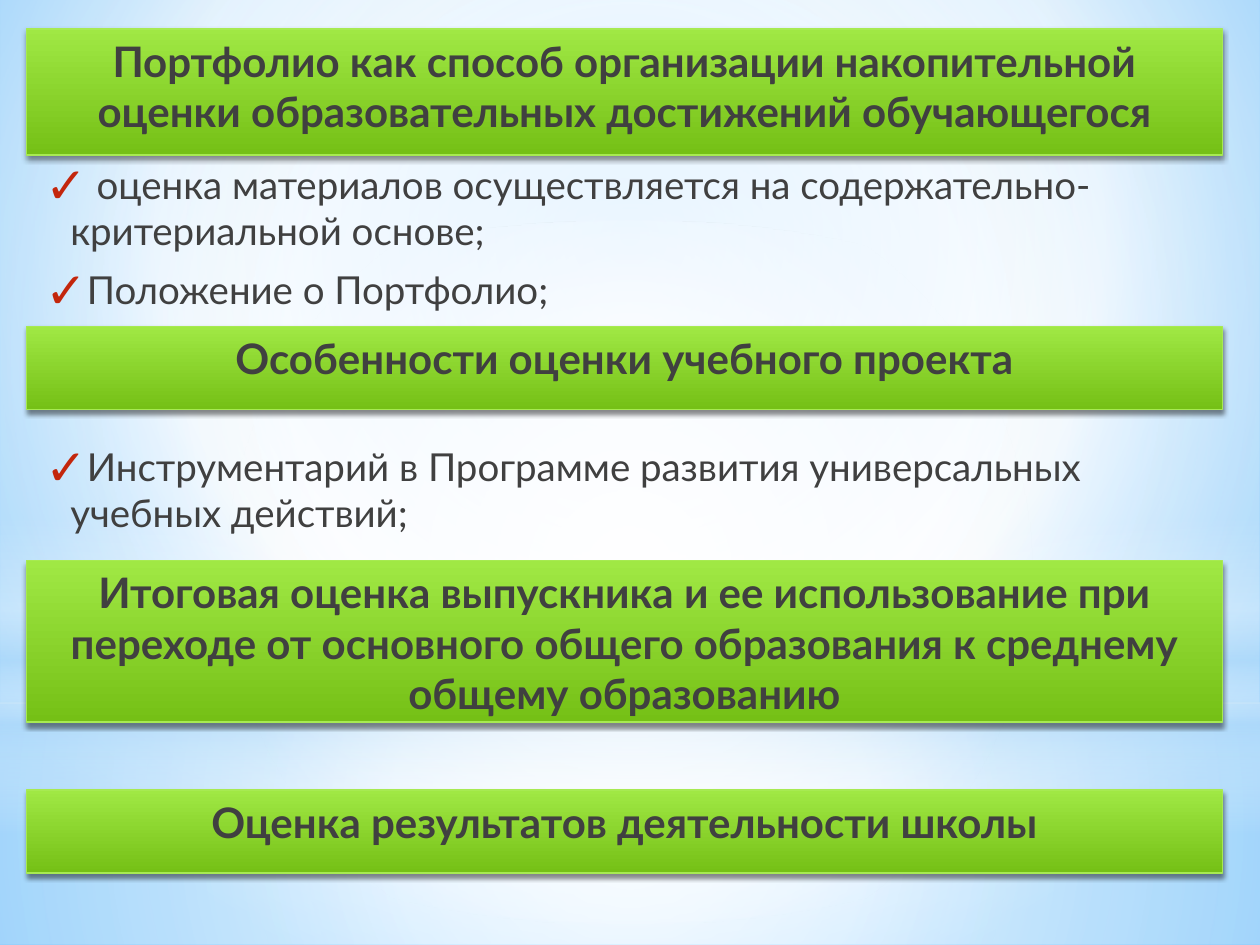
from dataclasses import dataclass
from typing import Any, Optional

import pptx
import pptx.dml.color
import pptx.enum.shapes
import pptx.enum.text
import pptx.oxml
import pptx.oxml.ns
import pptx.util

Pt = pptx.util.Pt
RECT = pptx.enum.shapes.MSO_SHAPE.RECTANGLE
OVAL = pptx.enum.shapes.MSO_SHAPE.OVAL
NS = pptx.oxml.ns.nsdecls("a")
FONT = "Lato"
COLORS = {
    "white": "FFFFFF", "sky": "B4DCFA", "bg_light": "9ED5FF", "bg_deep": "5BB9FF",
    "bar_top": "A0E844", "bar_bottom": "75C016", "bar_line": "A7EA52",
    "text": "404040", "check": "C3260C", "shadow": "000000",
}
WIDTH, HEIGHT = 720, 540
LEFT, COLUMN = 15.12, 683.28
CENTER = (50, 50, 50, 50)


@dataclass
class Stop:
    pos: int
    color: str
    opacity: int = 100


@dataclass
class Glow:
    shape: Any
    top: float
    height: float
    stops: list[Stop]
    focus: Optional[tuple[int, int, int, int]] = CENTER


@dataclass
class Bar:
    top: float
    height: float
    text: str


@dataclass
class Checklist:
    top: float
    height: float
    items: list[str]


def rgb(name: str) -> pptx.dml.color.RGBColor:
    return pptx.dml.color.RGBColor.from_string(COLORS[name])


def set_gradient(owner: Any, fill: Any, stops: list[Stop], focus=None) -> None:
    """Circular gradient around focus (left, top, right, bottom), or top to bottom without one."""
    fill.gradient()
    marks = "".join(
        f'<a:gs pos="{g.pos * 1000}"><a:srgbClr val="{COLORS[g.color]}">'
        f'<a:alpha val="{g.opacity * 1000}"/></a:srgbClr></a:gs>' for g in stops)
    if focus:
        sides = " ".join(f'{k}="{v * 1000}"' for k, v in zip("ltrb", focus))
        direction = f'<a:path path="circle"><a:fillToRect {sides}/></a:path>'
    else:
        direction = '<a:lin ang="5400000" scaled="0"/>'
    old = owner.element.xpath(".//a:gradFill")[0]
    old.getparent().replace(old, pptx.oxml.parse_xml(
        f'<a:gradFill {NS} rotWithShape="1"><a:gsLst>{marks}</a:gsLst>{direction}</a:gradFill>'))


def add_run(p: Any, text: str, size: float, bold: bool = False) -> None:
    r = p.add_run()
    r.text = text
    r.font.name, r.font.size, r.font.bold = FONT, Pt(size), bold
    r.font.color.rgb = rgb("text")


def add_glow(s: Any, glow: Glow) -> None:
    sp = s.shapes.add_shape(glow.shape, 0, Pt(glow.top), Pt(WIDTH), Pt(glow.height))
    sp.shadow.inherit = False
    sp.line.fill.background()
    set_gradient(sp, sp.fill, glow.stops, glow.focus)


def add_bar(s: Any, bar: Bar) -> None:
    sp = s.shapes.add_shape(RECT, Pt(LEFT), Pt(bar.top), Pt(COLUMN), Pt(bar.height))
    set_gradient(sp, sp.fill, [Stop(0, "bar_top"), Stop(100, "bar_bottom")])
    sp.line.color.rgb = rgb("bar_line")
    sp.line.width = Pt(0.75)
    # Soft shadow below the bar
    sp.shadow.inherit = False
    sp.element.xpath("./p:spPr/a:effectLst")[0].append(pptx.oxml.parse_xml(
        f'<a:outerShdw {NS} blurRad="{Pt(3.1)}" dist="{Pt(1.8)}" dir="5400000" rotWithShape="0">'
        f'<a:srgbClr val="{COLORS["shadow"]}"><a:alpha val="45000"/></a:srgbClr></a:outerShdw>'))
    tf = sp.text_frame
    tf.word_wrap = True
    tf.vertical_anchor = pptx.enum.text.MSO_ANCHOR.TOP
    p = tf.paragraphs[0]
    p.alignment = pptx.enum.text.PP_ALIGN.CENTER
    add_run(p, bar.text, 24, bold=True)


def add_checklist(s: Any, box: Checklist) -> None:
    sp = s.shapes.add_textbox(Pt(LEFT), Pt(box.top), Pt(COLUMN), Pt(box.height))
    tf = sp.text_frame
    tf.word_wrap = True
    for i, item in enumerate(box.items):
        p = tf.add_paragraph() if i else tf.paragraphs[0]
        p.space_before, p.space_after = Pt(4.4), Pt(3)
        pPr = p._p.get_or_add_pPr()
        pPr.set("marL", str(Pt(18)))
        pPr.set("indent", str(Pt(-14.4)))
        for xml in (f'<a:buClr {NS}><a:srgbClr val="{COLORS["check"]}"/></a:buClr>',
                    f'<a:buSzPct {NS} val="130000"/>',
                    f'<a:buFont {NS} typeface="{FONT}"/>',
                    f'<a:buChar {NS} char="✓"/>'):
            pPr.append(pptx.oxml.parse_xml(xml))
        add_run(p, item, 22)


GLOWS = [
    Glow(RECT, 401.76, 138.24,
         [Stop(0, "white", 91), Stop(37, "white", 76), Stop(100, "sky", 79)]),
    Glow(RECT, 0, 401.76,
         [Stop(0, "white", 89), Stop(48, "white", 62), Stop(100, "sky", 79)]),
    Glow(RECT, 296.64, 180,
         [Stop(0, "white", 0), Stop(29, "white", 30), Stop(45, "sky", 40),
          Stop(55, "white", 26), Stop(65, "sky", 60), Stop(100, "white", 0)], None),
    Glow(OVAL, 126, 401.76, [Stop(0, "white"), Stop(56, "white", 0)]),
]
CHECKLISTS = [
    Checklist(88.56, 98, [" оценка материалов осуществляется на содержательно-критериальной основе;",
                          "Положение о Портфолио;"]),
    Checklist(249.7, 64, ["Инструментарий в Программе развития универсальных учебных действий;"]),
]
BARS = [
    Bar(16.56, 72, "Портфолио как способ организации накопительной оценки "
                   "образовательных достижений обучающегося"),
    Bar(186.48, 47.52, "Особенности оценки учебного проекта"),
    Bar(320.4, 92.16, "Итоговая оценка выпускника и ее использование при переходе "
                      "от основного общего образования к среднему общему образованию"),
    Bar(451.44, 47.52, "Оценка результатов деятельности школы"),
]


def main() -> None:
    prs = pptx.Presentation()
    prs.slide_width, prs.slide_height = Pt(WIDTH), Pt(HEIGHT)
    s = prs.slides.add_slide(prs.slide_layouts[6])

    # Background and its light glows
    set_gradient(s, s.background.fill,
                 [Stop(0, "bg_light"), Stop(60, "white"), Stop(100, "bg_deep")], (20, 10, 20, 60))
    for glow in GLOWS:
        add_glow(s, glow)

    # Heading bars and the checklists between them
    for box in CHECKLISTS:
        add_checklist(s, box)
    for bar in BARS:
        add_bar(s, bar)
    prs.save("out.pptx")


if __name__ == "__main__":
    main()
